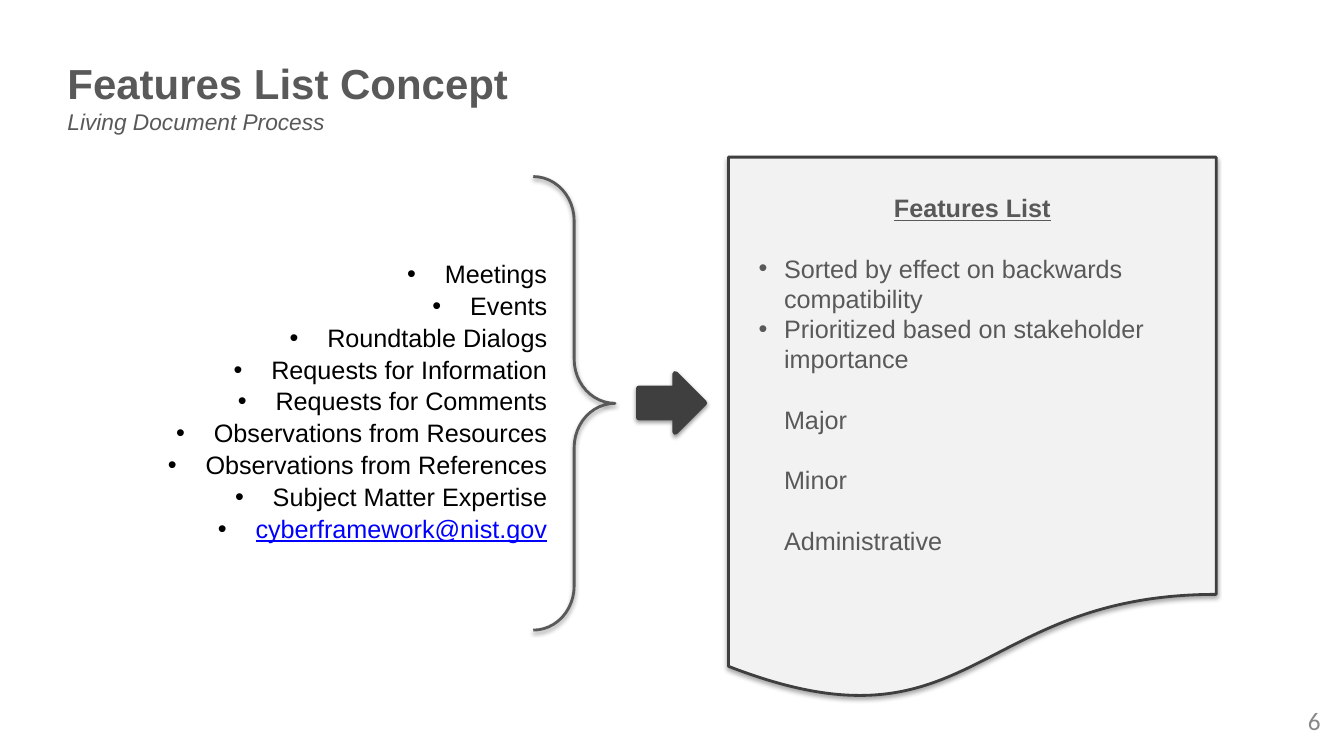
from dataclasses import dataclass

from lxml import etree
from pptx import Presentation, util as u
from pptx.dml.color import RGBColor
from pptx.enum import shapes, text
from pptx.oxml import ns

INK = {"black": "000000", "gray": "595959", "dark": "3F3F3F",
       "pale": "F2F2F2", "link": "0000FF", "page": "888888"}
KIND = shapes.MSO_SHAPE
SIDE = text.PP_ALIGN
EDGE = text.MSO_ANCHOR
LINE = 21.6


@dataclass
class Box:
    left: float
    top: float
    wide: float
    high: float

    def lengths(self) -> list:
        return [u.Cm(n) for n in (self.left, self.top, self.wide, self.high)]


@dataclass
class Para:
    words: str
    ink: str = "gray"
    size: float = 18
    face: str = "Arial"
    side: SIDE = SIDE.LEFT
    bold: bool = False
    under: bool = False
    dot: str = ""
    left: float = 0
    hang: float = 0
    gap: float = 0
    space: float = 1


@dataclass
class Form:
    kind: KIND
    box: Box
    line: str
    width: float
    alpha: int
    drop: float
    fill: str = ""
    bends: tuple = ()


def color(name: str) -> RGBColor:
    return RGBColor.from_string(INK[name])


def add(node, tag: str, **attrs):
    return etree.SubElement(node, ns.qn(tag), attrs)


def write(frame, paras: list, edge: EDGE, side: float = 0.25,
          top: float = 0.13) -> None:
    frame.word_wrap = True
    frame.vertical_anchor = edge
    frame.margin_left = frame.margin_right = u.Cm(side)
    frame.margin_top, frame.margin_bottom = u.Cm(top), u.Cm(0.13)
    for i, item in enumerate(paras):
        para = frame.paragraphs[0] if i == 0 else frame.add_paragraph()
        para.text = item.words
        props = para._p.get_or_add_pPr()
        props.set("marL", str(u.Cm(item.left)))
        props.set("indent", str(u.Cm(item.hang)))
        if item.dot:
            add(add(props, "a:buClr"), "a:srgbClr", val=INK[item.dot])
            add(props, "a:buFont", typeface="Arial")
            add(props, "a:buChar", char="•")
        para.alignment = item.side
        para.line_spacing = item.space
        para.space_before = u.Pt(item.gap if i else 0)
        for run in para.runs:
            font = run.font
            font.name, font.size = item.face, u.Pt(item.size)
            font.bold, font.underline = item.bold, item.under
            font.color.rgb = color(item.ink)


def label(slide, box: Box, paras: list, edge: EDGE):
    shape = slide.shapes.add_textbox(*box.lengths())
    write(shape.text_frame, paras, edge)
    return shape


def draw(slide, form: Form):
    shape = slide.shapes.add_shape(form.kind, *form.box.lengths())
    for i, bend in enumerate(form.bends):
        shape.adjustments[i] = bend
    if form.fill:
        shape.fill.solid()
        shape.fill.fore_color.rgb = color(form.fill)
    else:
        shape.fill.background()
    shape.line.color.rgb = color(form.line)
    shape.line.width = u.Pt(form.width)
    add(shape.line._ln, "a:round")
    shape.shadow.inherit = False
    effects = shape._element.spPr.find(ns.qn("a:effectLst"))
    shade = add(effects, "a:outerShdw", blurRad=str(u.Pt(3)),
                dist=str(u.Pt(form.drop)), dir="5400000", rotWithShape="0")
    tint = add(shade, "a:srgbClr", val=INK["black"])
    add(tint, "a:alpha", val=str(form.alpha * 1000))
    return shape


def main() -> None:
    deck = Presentation()
    deck.slide_width, deck.slide_height = u.Cm(33.87), u.Cm(19.05)
    slide = deck.slides.add_slide(deck.slide_layouts[6])

    title = label(slide, Box(1.45, 1.37, 23.5, 2.11),
                  [Para("Features List Concept\vLiving Document Process",
                        size=30, bold=True)], EDGE.MIDDLE)
    minor = title.text_frame.paragraphs[0].runs[1].font
    minor.size, minor.bold, minor.italic = u.Pt(16.2), False, True

    inputs = ["Meetings", "Events", "Roundtable Dialogs",
              "Requests for Information", "Requests for Comments",
              "Observations from Resources", "Observations from References",
              "Subject Matter Expertise", "cyberframework@nist.gov"]
    items = [Para(words, ink="link" if "@" in words else "black",
                  under="@" in words, side=SIDE.RIGHT, dot="black",
                  left=0.95, hang=-0.95, gap=3.3, space=0.9)
             for words in inputs]
    label(slide, Box(2.41, 4.75, 11.63, 10.8), items, EDGE.MIDDLE)

    paper = draw(slide, Form(KIND.FLOWCHART_DOCUMENT,
                             Box(18.36, 3.96, 12.29, 13.74),
                             "dark", 2, 35, 1.8, "pale"))
    notes = [Para("Features List", side=SIDE.CENTER, bold=True, under=True)]
    rules = ["Sorted by effect on backwards compatibility",
             "Prioritized based on stakeholder importance"]
    notes += [Para(words, dot="gray", left=1.27, hang=-0.64,
                   gap=0 if i else LINE) for i, words in enumerate(rules)]
    notes += [Para(words, left=1.27, gap=LINE)
              for words in ("Major", "Minor", "Administrative")]
    write(paper.text_frame, notes, EDGE.TOP, side=0.13, top=0.89)

    draw(slide, Form(KIND.RIGHT_ARROW, Box(16.1, 9.42, 1.65, 1.47),
                     "dark", 4, 38, 1.6, "dark", (0.5, 0.5)))
    draw(slide, Form(KIND.RIGHT_BRACE, Box(13.44, 4.45, 2.06, 11.43),
                     "gray", 2, 38, 1.6, bends=(0.54, 0.5)))
    label(slide, Box(27.61, 17.65, 5.92, 1.02),
          [Para("6", ink="page", face="Calibri", side=SIDE.RIGHT)],
          EDGE.MIDDLE)
    deck.save("out.pptx")


if __name__ == "__main__":
    main()
